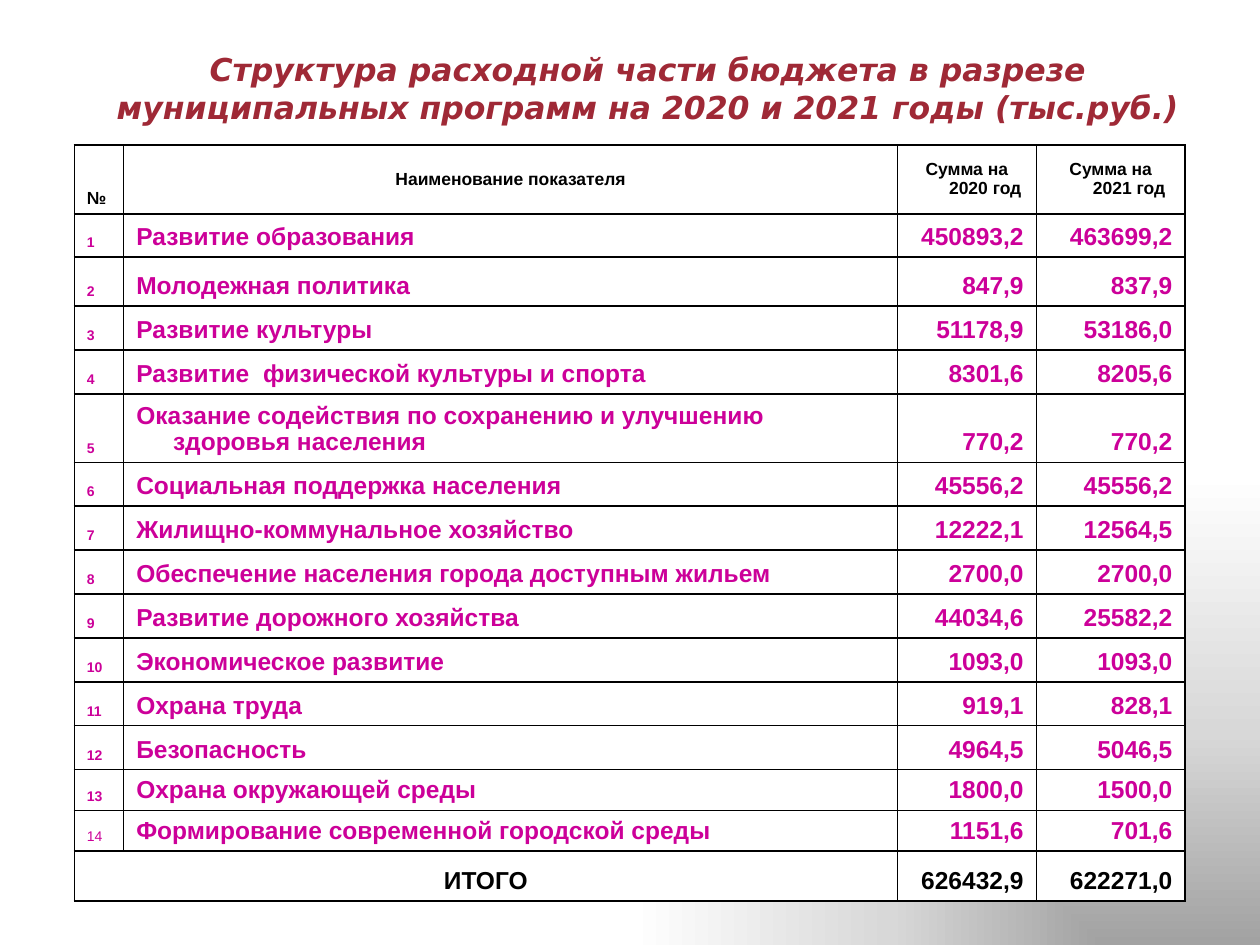
from lxml import etree
from pptx import Presentation
from pptx.dml.color import RGBColor
from pptx.enum.dml import MSO_PATTERN
from pptx.enum.text import MSO_ANCHOR as Anchor, PP_ALIGN as Align
from pptx.oxml import parse_xml
from pptx.oxml.ns import nsdecls, qn
from pptx.util import Pt

BLACK, WHITE, MAGENTA, RED = "000000", "FFFFFF", "CC0099", "9F2936"
TITLE = ("Структура расходной части бюджета в разрезе "
         "муниципальных программ на 2020 и 2021 годы (тыс.руб.)")
HEADERS = ["№", "Наименование показателя", "Сумма на 2020 год", "Сумма на 2021 год"]
PROGRAMS = [
    ("Развитие образования", "450893,2", "463699,2"),
    ("Молодежная политика", "847,9", "837,9"),
    ("Развитие культуры", "51178,9", "53186,0"),
    ("Развитие  физической культуры и спорта", "8301,6", "8205,6"),
    ("Оказание содействия по сохранению и улучшению здоровья населения", "770,2", "770,2"),
    ("Социальная поддержка населения", "45556,2", "45556,2"),
    ("Жилищно-коммунальное хозяйство", "12222,1", "12564,5"),
    ("Обеспечение населения города доступным жильем", "2700,0", "2700,0"),
    ("Развитие дорожного хозяйства", "44034,6", "25582,2"),
    ("Экономическое развитие", "1093,0", "1093,0"),
    ("Охрана труда", "919,1", "828,1"),
    ("Безопасность", "4964,5", "5046,5"),
    ("Охрана окружающей среды", "1800,0", "1500,0"),
    ("Формирование современной городской среды", "1151,6", "701,6"),
]
TOTALS = ["ИТОГО", "", "626432,9", "622271,0"]
COLUMN_WIDTHS = [28.2, 442.1, 79.4, 85]
ROW_HEIGHTS = [39.6, 24.5, 28] + [25.1] * 2 + [38.2] + [25.1] * 7 + [23.3] * 2 + [28.6]


def color(hex_string):
    """Return the colour for a hex string."""
    return RGBColor.from_string(hex_string)


def format_paragraph(paragraph, size, hex_string, align, font="Arial", bold=True, italic=False):
    """Format a paragraph and all its runs."""
    paragraph.alignment = align
    for run in paragraph.runs:
        run.font.name = font
        run.font.size = Pt(size)
        run.font.bold = bold
        run.font.italic = italic
        run.font.color.rgb = color(hex_string)


def set_background(slide):
    """Fill the background with a gradient that spreads from the lower right corner."""
    slide.background.fill.solid()
    properties = slide.background._cSld.bg.bgPr
    stops = "".join(f'<a:gs pos="{position * 1000}"><a:srgbClr val="{shade}"/></a:gs>'
                    for position, shade in [(0, "A2A2A2"), (45, "D8D8D8"), (100, WHITE)])
    gradient = parse_xml(
        f'<a:gradFill {nsdecls("a")} rotWithShape="1"><a:gsLst>{stops}</a:gsLst>'
        '<a:path path="rect"><a:fillToRect l="100000" t="100000"/></a:path></a:gradFill>')
    properties.replace(properties.find(qn("a:solidFill")), gradient)


def add_title(slide, left, top, width, height):
    """Place the slide title in the given box."""
    text_frame = slide.shapes.add_textbox(Pt(left), Pt(top), Pt(width), Pt(height)).text_frame
    text_frame.word_wrap = True
    text_frame.vertical_anchor = Anchor.BOTTOM
    text_frame.text = TITLE
    format_paragraph(text_frame.paragraphs[0], 18, RED, Align.CENTER, "DejaVu Sans", italic=True)


def add_borders(cell):
    """Draw thin black lines on all sides of a cell."""
    properties = cell._tc.get_or_add_tcPr()
    for index, side in enumerate(["lnL", "lnR", "lnT", "lnB"]):
        line = etree.Element(qn(f"a:{side}"), w=str(Pt(1)))
        fill = etree.SubElement(line, qn("a:solidFill"))
        etree.SubElement(fill, qn("a:srgbClr"), val=BLACK)
        properties.insert(index, line)


def fill_cell(cell, text, size, hex_string, align, anchor=Anchor.BOTTOM, bold=True):
    """Write a cell's text with a hanging indent and style the cell."""
    cell.fill.patterned()
    cell.fill.pattern = MSO_PATTERN.WAVE
    cell.fill.fore_color.rgb = color(WHITE)
    cell.fill.back_color.rgb = color(WHITE)
    add_borders(cell)
    cell.vertical_anchor = anchor
    cell.text = text
    paragraph = cell.text_frame.paragraphs[0]
    paragraph.line_spacing = 0.95
    format_paragraph(paragraph, size, hex_string, align, bold=bold)
    properties = paragraph._p.get_or_add_pPr()
    properties.set("marL", str(Pt(21)))
    properties.set("indent", str(Pt(-21)))


def add_budget_table(slide, left, top):
    """Place the budget table with its upper left corner at the given point."""
    table = slide.shapes.add_table(
        len(ROW_HEIGHTS), len(COLUMN_WIDTHS), Pt(left), Pt(top),
        Pt(sum(COLUMN_WIDTHS)), Pt(sum(ROW_HEIGHTS))).table
    table.first_row = table.horz_banding = False
    for column, width in zip(table.columns, COLUMN_WIDTHS):
        column.width = Pt(width)
    for row, height in zip(table.rows, ROW_HEIGHTS):
        row.height = Pt(height)

    for index, header in enumerate(HEADERS):
        align, anchor = (Align.CENTER, Anchor.MIDDLE) if index else (Align.LEFT, Anchor.BOTTOM)
        fill_cell(table.cell(0, index), header, 10, BLACK, align, anchor)

    for number, (name, *amounts) in enumerate(PROGRAMS, 1):
        fill_cell(table.cell(number, 0), str(number), 8, MAGENTA, Align.LEFT,
                  bold=number < len(PROGRAMS))
        fill_cell(table.cell(number, 1), name, 14, MAGENTA, Align.LEFT)
        for index, amount in enumerate(amounts, 2):
            fill_cell(table.cell(number, index), amount, 14, MAGENTA, Align.RIGHT)

    last = len(ROW_HEIGHTS) - 1
    for index, total in enumerate(TOTALS):
        fill_cell(table.cell(last, index), total, 14, BLACK,
                  Align.RIGHT if index else Align.CENTER)
    table.cell(last, 0).merge(table.cell(last, 1))


def main():
    """Build and save the presentation."""
    presentation = Presentation()
    presentation.slide_width, presentation.slide_height = Pt(720), Pt(540)
    slide = presentation.slides.add_slide(presentation.slide_layouts[6])
    set_background(slide)
    add_title(slide, 48, 43.2, 644.4, 32.4)
    add_budget_table(slide, 42.5, 82.8)
    presentation.save("out.pptx")


if __name__ == "__main__":
    main()
